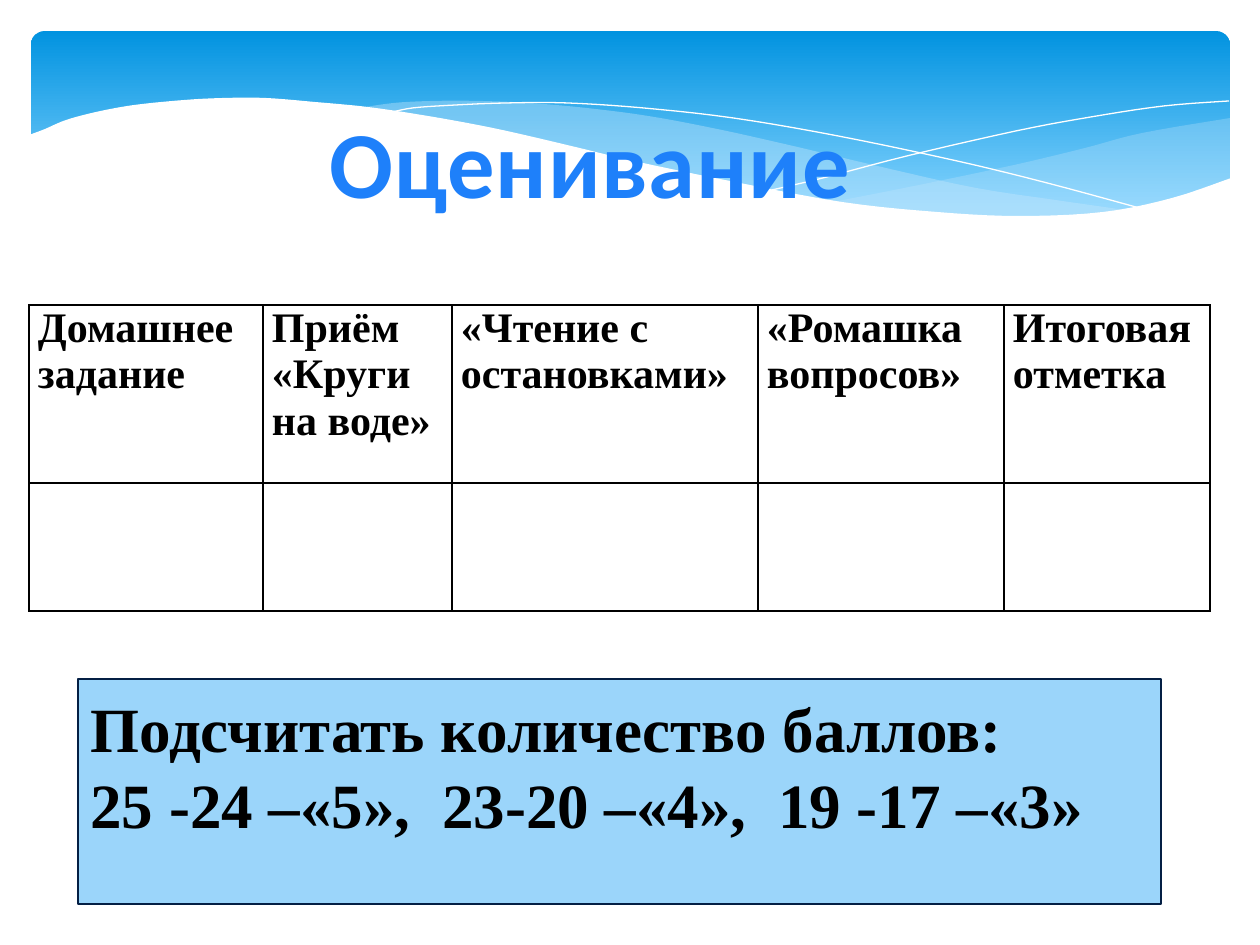
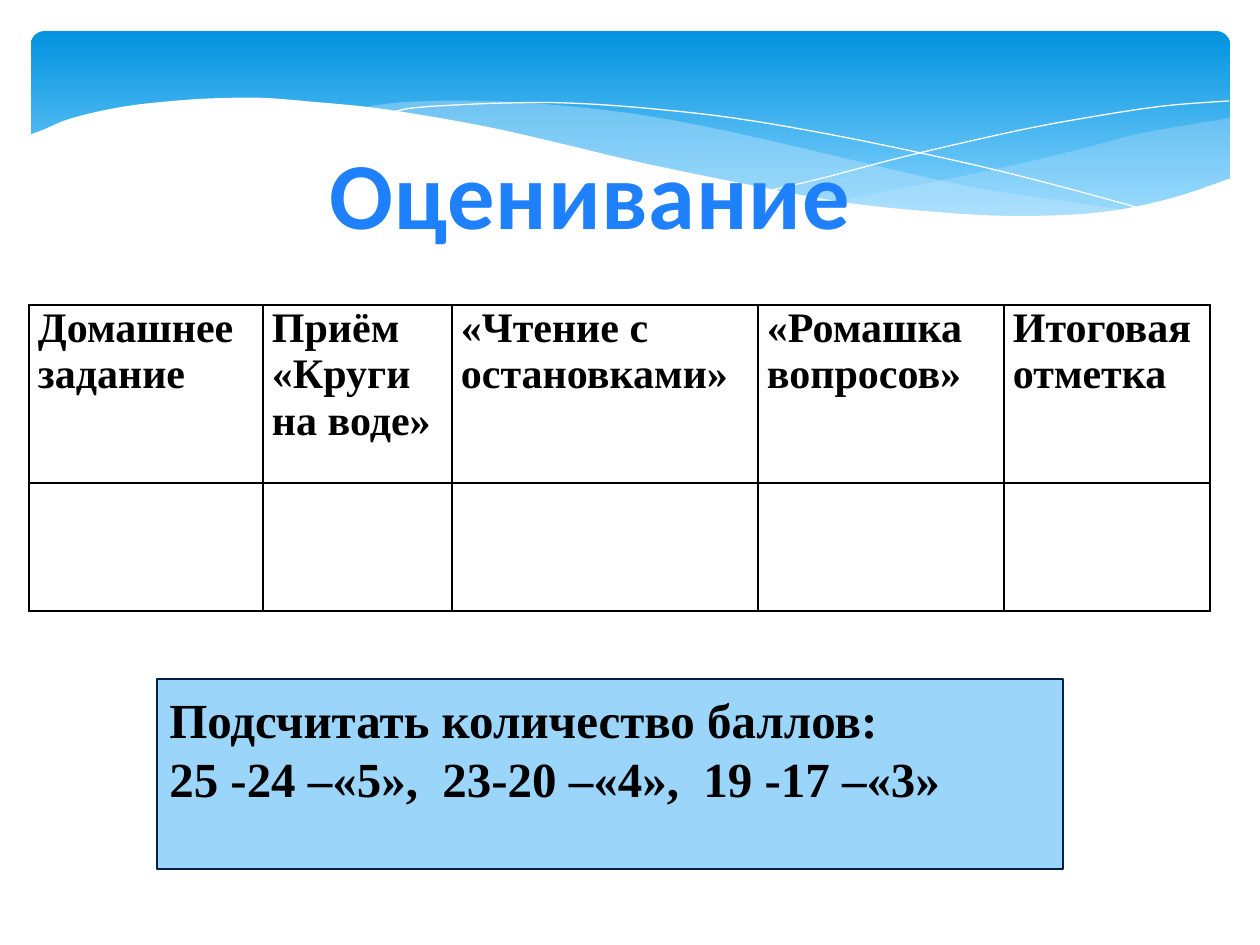
from lxml.etree import SubElement
from pptx import Presentation
from pptx.dml.color import RGBColor
from pptx.enum.shapes import MSO_SHAPE as Preset
from pptx.enum.text import MSO_ANCHOR as Anchor, PP_ALIGN as Align
from pptx.oxml.ns import qn
from pptx.util import Pt

# Content
TITLE = "Оценивание"
HEADERS = ["Домашнее задание", "Приём «Круги на воде»", "«Чтение с остановками»",
           "«Ромашка вопросов»", "Итоговая отметка"]
SCORES = ["Подсчитать количество баллов:", "25 -24 –«5»,  23-20 –«4»,  19 -17 –«3»"]
PAGES = [
    {"title_top": 98, "score_box": (78, 679, 1083, 225), "score_size": 36},
    {"title_top": 129, "score_box": (157, 679, 906, 190), "score_size": 28},
]

# Shared look, lengths in px
SCALE = 914400 / 126
PAGE_SIZE = (1260, 945)
SANS, SERIF = "Calibri", "Times New Roman"
BLACK, WHITE, RIBBON = "000000", "FFFFFF", "C6E7FC"
SCORE_FILL, SCORE_LINE = "9BD5FA", "041F44"
BAND_STOPS = [(0, "0293E0"), (0.9, "83D3FE")]
TITLE_STOPS = [(0.25, "1E80FA"), (1, "105AB6")]
COLUMN_WIDTHS = [234, 189, 306, 246, 206]
ROW_HEIGHTS = [178, 128]

# Header waves: each outline is a chain of smooth edges
RIGHT_RIBBON = [
    [(1230, 118), (1142, 133), (1085, 148), (1014, 165), (919, 185), (833, 202)],
    [(833, 202), (906, 211), (983, 216), (1052, 217), (1109, 213), (1160, 204),
     (1195, 194), (1230, 178)],
]
LONG_RIBBON = [
    [(1125, 210), (1055, 200), (976, 188), (890, 169), (793, 146), (717, 129),
     (648, 116), (586, 108), (529, 103), (479, 101), (433, 101), (394, 103), (360, 108)],
    [(360, 108), (407, 113), (483, 127), (566, 146), (668, 170), (757, 189),
     (838, 203), (910, 212), (988, 217), (1056, 217), (1125, 210)],
]
FALLING_LINE = [[(389, 113), (413, 108), (457, 105), (508, 103), (567, 103), (643, 108),
                 (733, 118), (838, 136), (957, 161), (1047, 183), (1143, 209)]]
RISING_LINE = [[(772, 190), (823, 178), (907, 156), (1016, 131), (1091, 117),
                (1164, 106), (1229, 101)]]
WHITE_WAVE = [
    [(1231, 178), (1172, 198), (1103, 212), (1019, 216), (937, 212), (842, 202),
     (730, 181), (634, 161), (563, 144), (493, 128), (428, 116), (368, 107), (315, 102),
     (266, 98), (223, 98), (184, 100), (134, 105), (96, 112), (66, 120), (45, 129),
     (29, 135)],
    [(29, 282), (1231, 282)],
]


def px(length):
    return round(length * SCALE)


def px_all(lengths):
    return [px(length) for length in lengths]


def rgb(code):
    return RGBColor.from_string(code)


def paint(fill, code):
    fill.solid()
    fill.fore_color.rgb = rgb(code)


def paint_down(fill, stops):
    """Gradient from top to bottom."""
    fill.gradient()
    fill.gradient_angle = 270
    for stop, (position, code) in zip(fill.gradient_stops, stops):
        stop.position = position
        stop.color.rgb = rgb(code)


def style(paragraph, font_name, size, code=BLACK):
    for span in paragraph.runs:
        span.font.name, span.font.size, span.font.bold = font_name, Pt(size), True
        span.font.color.rgb = rgb(code)


def smooth(points, steps=5):
    """Catmull-Rom curve through the points."""
    padded = [points[0], *points, points[-1]]
    curve = [points[0]]
    for a, b, c, d in zip(padded, padded[1:], padded[2:], padded[3:]):
        for step in range(1, steps + 1):
            t = step / steps
            curve.append(tuple(
                (2 * q + (r - p) * t + (2 * p - 5 * q + 4 * r - s) * t ** 2
                 + (3 * q - p - 3 * r + s) * t ** 3) / 2
                for p, q, r, s in zip(a, b, c, d)))
    return curve


def add_wave(page, edges, closed=True):
    points = [px_all(point) for edge in edges for point in smooth(edge)]
    builder = page.shapes.build_freeform(*points[0])
    builder.add_line_segments(points[1:], close=closed)
    wave = builder.convert_to_shape()
    wave.shadow.inherit = False
    return wave


def add_filled_wave(page, edges, code, opacity=100):
    wave = add_wave(page, edges)
    paint(wave.fill, code)
    wave.line.fill.background()
    if opacity < 100:
        color = wave.element.spPr.find(qn("a:solidFill"))[0]
        SubElement(color, qn("a:alpha"), val=str(opacity * 1000))


def add_line_wave(page, edges):
    wave = add_wave(page, edges, closed=False)
    wave.fill.background()
    paint(wave.line.fill, WHITE)
    wave.line.width = Pt(0)


def add_header(page):
    band = page.shapes.add_shape(Preset.ROUNDED_RECTANGLE, *px_all((31, 31, 1199, 197)))
    band.adjustments[0] = 0.07
    band.shadow.inherit = False
    band.line.fill.background()
    paint_down(band.fill, BAND_STOPS)
    add_filled_wave(page, RIGHT_RIBBON, RIBBON, 29)
    add_filled_wave(page, LONG_RIBBON, RIBBON, 40)
    add_line_wave(page, FALLING_LINE)
    add_line_wave(page, RISING_LINE)
    add_filled_wave(page, WHITE_WAVE, WHITE)


def add_title(page, top):
    box = page.shapes.add_textbox(*px_all((314, top, 552, 127)))
    frame = box.text_frame
    frame.word_wrap = True
    frame.margin_left = frame.margin_right = 0
    frame.text = TITLE
    paragraph = frame.paragraphs[0]
    paragraph.alignment = Align.CENTER
    style(paragraph, SANS, 54)
    span = paragraph.runs[0]
    paint_down(span.font.fill, TITLE_STOPS)
    span.font._element.set("spc", "50")


def add_borders(cell):
    properties = cell._tc.get_or_add_tcPr()
    for side in ("a:lnL", "a:lnR", "a:lnT", "a:lnB"):
        line = SubElement(properties, qn(side), w=str(Pt(1)))
        SubElement(SubElement(line, qn("a:solidFill")), qn("a:srgbClr"), val=BLACK)


def add_grades(page):
    frame = page.shapes.add_table(
        len(ROW_HEIGHTS), len(HEADERS),
        *px_all((29, 305, sum(COLUMN_WIDTHS), sum(ROW_HEIGHTS))))
    table = frame.table
    table.first_row = table.horz_banding = False
    for column, width in zip(table.columns, COLUMN_WIDTHS):
        column.width = px(width)
    for row, height in zip(table.rows, ROW_HEIGHTS):
        row.height = px(height)
    for cell in table.iter_cells():
        add_borders(cell)
        cell.fill.background()
        cell.margin_left = cell.margin_right = px(9)
        cell.margin_top = cell.margin_bottom = 0
    for cell, header in zip(table.rows[0].cells, HEADERS):
        cell.text = header
        style(cell.text_frame.paragraphs[0], SERIF, 24)


def add_scores(page, place, size):
    box = page.shapes.add_shape(Preset.RECTANGLE, *px_all(place))
    box.shadow.inherit = False
    paint(box.fill, SCORE_FILL)
    paint(box.line.fill, SCORE_LINE)
    box.line.width = Pt(0.75)
    frame = box.text_frame
    frame.word_wrap = True
    frame.vertical_anchor = Anchor.TOP
    frame.margin_top = px(11)
    frame.text = "\n".join(SCORES)
    for paragraph in frame.paragraphs:
        paragraph.alignment = Align.LEFT
        style(paragraph, SERIF, size)


def main():
    deck = Presentation()
    deck.slide_width, deck.slide_height = px_all(PAGE_SIZE)
    for content in PAGES:
        page = deck.slides.add_slide(deck.slide_layouts[6])
        add_header(page)
        add_title(page, content["title_top"])
        add_grades(page)
        add_scores(page, content["score_box"], content["score_size"])
    deck.save("out.pptx")


if __name__ == "__main__":
    main()
